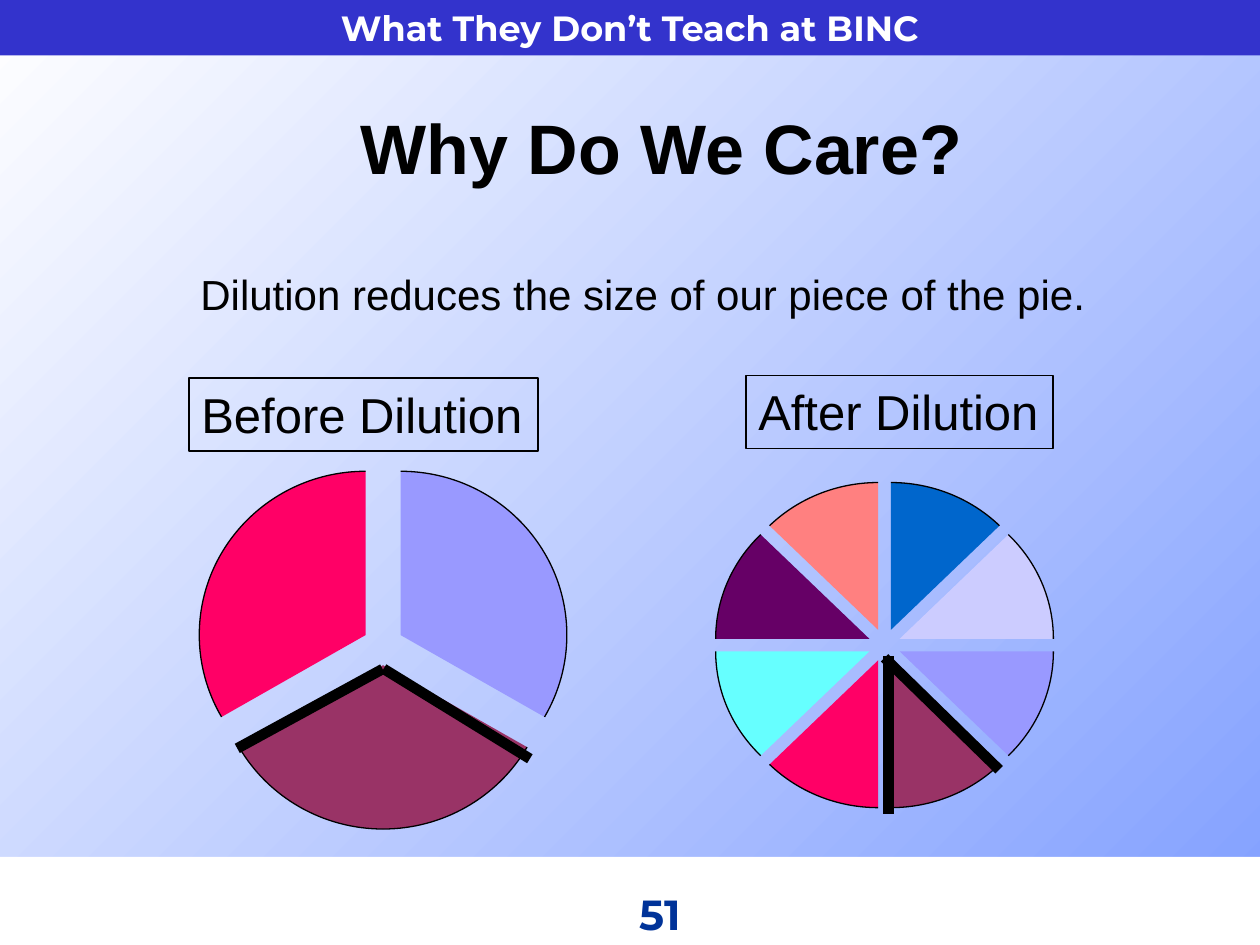
from copy import deepcopy
from math import cos, radians, sin, tan

from lxml.etree import SubElement
from pptx import Presentation
from pptx.dml.color import RGBColor as Rgb
from pptx.enum.shapes import MSO_CONNECTOR as Connector, MSO_SHAPE as Shape
from pptx.enum.text import MSO_ANCHOR as Anchor, MSO_AUTO_SIZE as AutoSize, PP_ALIGN as Align
from pptx.oxml.ns import qn
from pptx.util import Emu, Pt

SCALE = 9144
COLORS = {
    "white": "FFFFFF", "black": "000000", "sky": "819FFF", "banner": "3333CC",
    "number": "003399", "lavender": "9999FF", "plum": "993366", "pink": "FF0066",
    "cyan": "66FFFF", "purple": "660066", "coral": "FF8080", "blue": "0066CC",
    "lilac": "CCCCFF",
}


def px(*lengths):
    return [Emu(round(length * SCALE)) for length in lengths]


def write(shape, text, size, font="Arial", color="black", bold=False,
          align=Align.LEFT, anchor=Anchor.TOP, wrap=True):
    frame = shape.text_frame
    frame.word_wrap = wrap
    frame.auto_size = AutoSize.NONE
    frame.vertical_anchor = anchor
    paragraph = frame.paragraphs[0]
    paragraph.alignment = align
    paragraph.space_before = Pt(0)
    run = paragraph.add_run()
    run.text = text
    run.font.name = font
    run.font.size = Pt(size)
    run.font.bold = bold
    run.font.color.rgb = Rgb.from_string(COLORS[color])
    return paragraph


presentation = Presentation()
presentation.slide_width, presentation.slide_height = px(1000, 750)
slide = presentation.slides.add_slide(presentation.slide_layouts[1])
shapes = slide.shapes

background = slide.background.fill
background.gradient()
background.gradient_angle = 315
for stop, position, color in zip(background.gradient_stops, (0, 1), ("white", "sky")):
    stop.position = position
    stop.color.rgb = Rgb.from_string(COLORS[color])

bands = []
for top, height, color in [(680, 70, "white"), (0, 44, "banner")]:
    band = shapes.add_shape(Shape.RECTANGLE, *px(0, top, 1000, height))
    band.shadow.inherit = False
    band.fill.solid()
    band.fill.fore_color.rgb = Rgb.from_string(COLORS[color])
    band.line.fill.background()
    bands.append(band)
write(bands[1], "What They Don’t Teach at BINC", 20, "Montserrat", "white", True,
      Align.CENTER, Anchor.MIDDLE)

title = shapes.title
title.left, title.top, title.width, title.height = px(58, 74, 934, 84)
write(title, "Why Do We Care?", 40, bold=True, align=Align.CENTER, anchor=Anchor.MIDDLE)

body = slide.placeholders[1]
body.left, body.top, body.width, body.height = px(149, 208, 858, 119)
statement = write(body, "Dilution reduces the size of our piece of the pie.", 24)
properties = statement._p.get_or_add_pPr()
properties.set("marL", str(6 * SCALE))
properties.set("indent", str(-6 * SCALE))
SubElement(properties, qn("a:buNone"))

for text, left, top, width in [("Before Dilution", 150, 300, 277),
                               ("After Dilution", 592, 298, 244)]:
    label = shapes.add_textbox(*px(left, top, width, 58))
    label.line.color.rgb = Rgb.from_string(COLORS["black"])
    label.line.width = Pt(1)
    write(label, text, 28, wrap=False)

pies = [
    {"center": (304, 512), "radii": (132, 130), "gap": 16,
     "slices": ["lavender", "plum", "pink"],
     "edges": [(308, 533, 417, 600), (300, 533, 192, 592)]},
    {"center": (702, 512), "radii": (122, 117), "gap": 13,
     "slices": ["blue", "lilac", "lavender", "plum", "pink", "cyan", "purple", "coral"],
     "edges": [(790, 608, 705, 525), (705, 525, 705, 642)]},
]
for pie in pies:
    sweep = 360 // len(pie["slices"])
    radius_x, radius_y = pie["radii"]
    for index, color in enumerate(pie["slices"]):
        start = index * sweep - 90
        end = start + sweep
        middle = radians(start + sweep / 2)
        tip_x = pie["center"][0] + pie["gap"] * cos(middle)
        tip_y = pie["center"][1] + pie["gap"] * sin(middle)

        quarters = [angle for angle in range(0, 271, 90) if start < angle < end]
        stops = [radians(angle) for angle in [start, *quarters, end]]
        units = [(cos(stops[0]), sin(stops[0]))]
        for first, last in zip(stops, stops[1:]):
            pull = 4 / 3 * tan((last - first) / 4)
            units += [(cos(first) - pull * sin(first), sin(first) + pull * cos(first)),
                      (cos(last) + pull * sin(last), sin(last) - pull * cos(last)),
                      (cos(last), sin(last))]
        arc = [px(tip_x + radius_x * x, tip_y + radius_y * y) for x, y in units]
        builder = shapes.build_freeform(*arc[0])
        builder.add_line_segments(arc[1:] + [px(tip_x, tip_y)], close=True)
        wedge = builder.convert_to_shape()
        wedge.shadow.inherit = False
        wedge.fill.solid()
        wedge.fill.fore_color.rgb = Rgb.from_string(COLORS[color])
        wedge.line.color.rgb = Rgb.from_string(COLORS["black"])
        wedge.line.width = Pt(0.75)

        area = wedge._element.find(".//" + qn("a:path"))
        segments = list(area)[1:-2]
        for position in range(0, len(segments), 3):
            curve = SubElement(area, qn("a:cubicBezTo"))
            segments[position].addprevious(curve)
            for segment in segments[position:position + 3]:
                curve.append(segment[0])
                area.remove(segment)
        rim = deepcopy(area)
        for segment in rim[-2:]:
            rim.remove(segment)
        rim.set("fill", "none")
        area.set("stroke", "0")
        area.addprevious(rim)

    for edge in pie["edges"]:
        line = shapes.add_connector(Connector.STRAIGHT, *px(*edge))
        line.line.color.rgb = Rgb.from_string(COLORS["black"])
        line.line.width = Pt(6)
        line.line._get_or_add_ln().set("cap", "sq")
        SubElement(line._element.spPr, qn("a:effectLst"))

number = shapes.add_textbox(*px(342, 700, 208, 50))
write(number, "51", 24, "Montserrat", "number", True, Align.RIGHT)

presentation.save("out.pptx")
